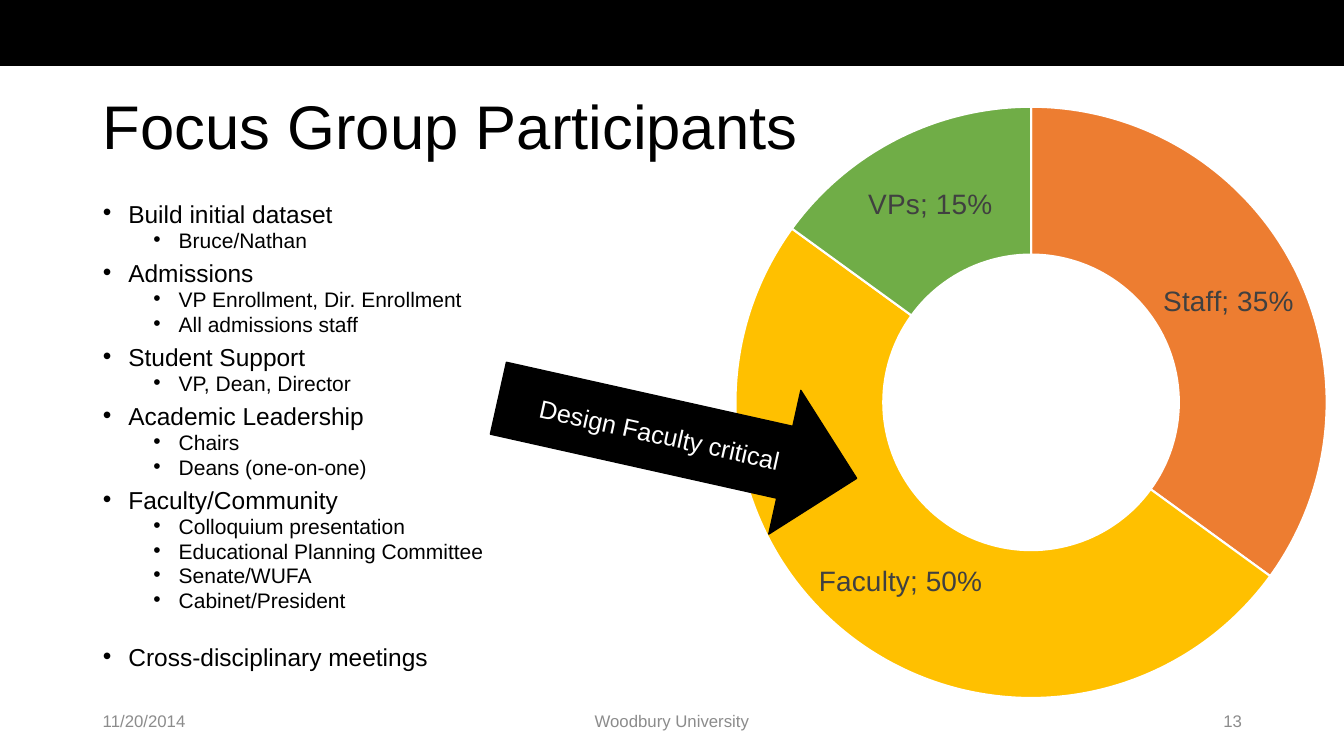
from lxml.etree import SubElement
from pptx import Presentation
from pptx.chart.data import CategoryChartData
from pptx.dml.color import RGBColor
from pptx.enum.chart import XL_CHART_TYPE
from pptx.enum.shapes import MSO_SHAPE
from pptx.enum.text import MSO_ANCHOR, MSO_AUTO_SIZE, PP_ALIGN
from pptx.oxml.ns import qn
from pptx.util import Cm, Pt

BLACK = RGBColor(0x00, 0x00, 0x00)
WHITE = RGBColor(0xFF, 0xFF, 0xFF)
FOOTER_GREY = RGBColor(0x8C, 0x8C, 0x8C)
LABEL_GREY = RGBColor(0x40, 0x40, 0x40)
ORANGE = RGBColor(0xED, 0x7D, 0x31)
GOLD = RGBColor(0xFF, 0xC0, 0x00)
GREEN = RGBColor(0x70, 0xAD, 0x47)

SLIDE_WIDTH, SLIDE_HEIGHT = 33.87, 19.05
MARGIN = 2.34
CONTENT_WIDTH = 29.21

TOPICS = [
    ("Build initial dataset", ["Bruce/Nathan"]),
    ("Admissions", ["VP Enrollment, Dir. Enrollment", "All admissions staff"]),
    ("Student Support", ["VP, Dean, Director"]),
    ("Academic Leadership", ["Chairs", "Deans (one-on-one)"]),
    ("Faculty/Community", ["Colloquium presentation", "Educational Planning Committee",
                           "Senate/WUFA", "Cabinet/President"]),
    ("Cross-disciplinary meetings", []),
]
CLOSING_GAP = 27
PARTICIPANTS = [("Staff", 0.35, ORANGE), ("Faculty", 0.5, GOLD), ("VPs", 0.15, GREEN)]
FOOTERS = [
    (MARGIN, 7.62, "11/20/2014", PP_ALIGN.LEFT),
    (11.22, 11.43, "Woodbury University", PP_ALIGN.CENTER),
    (23.93, 7.62, "13", PP_ALIGN.RIGHT),
]


class SlideBuilder:
    """Holds the text style and the current slide, and adds elements to it."""

    font_name = "Arial"

    def __init__(self, presentation):
        """Start a title-and-content slide."""
        self.slide = presentation.slides.add_slide(presentation.slide_layouts[1])

    def apply(self, target, **values):
        """Set each named value on the target."""
        for name, value in values.items():
            setattr(target, name, value)

    def style_font(self, font, size, color):
        """Give a font the slide's typeface, a size and a colour."""
        self.apply(font, name=self.font_name, size=Pt(size))
        font.color.rgb = color

    def place(self, shape, left, top, width, height):
        """Move and size a shape in centimetres."""
        self.apply(shape, left=Cm(left), top=Cm(top), width=Cm(width), height=Cm(height))

    def caption(self, shape, text, size, color, alignment):
        """Put one vertically centred line of text in a shape."""
        self.apply(shape.text_frame, text=text, word_wrap=True,
                   auto_size=MSO_AUTO_SIZE.NONE, vertical_anchor=MSO_ANCHOR.MIDDLE)
        paragraph = shape.text_frame.paragraphs[0]
        paragraph.alignment = alignment
        self.style_font(paragraph.font, size, color)
        return paragraph

    def title(self, text, *box):
        """Fill the title placeholder."""
        shape = self.slide.shapes.title
        self.place(shape, *box)
        self.caption(shape, text, 44, BLACK, PP_ALIGN.LEFT).line_spacing = 0.9

    def bullet(self, paragraph, text, level, space_before):
        """Format one bulleted paragraph."""
        paragraph.text = text
        properties = paragraph._p.get_or_add_pPr()
        properties.set("marL", str(Cm(0.64 + 1.27 * level)))
        properties.set("indent", str(-Cm(0.64)))
        self.apply(paragraph, level=level, line_spacing=0.7,
                   space_before=Pt(space_before), alignment=PP_ALIGN.LEFT)
        SubElement(properties, qn("a:buFont")).set("typeface", self.font_name)
        SubElement(properties, qn("a:buChar")).set("char", "•")
        self.style_font(paragraph.font, 15 if level else 17.5, BLACK)

    def topics(self, groups, *box):
        """Fill the body placeholder with a two-level list."""
        shape = self.slide.placeholders[1]
        self.place(shape, *box)
        frame = shape.text_frame
        self.apply(frame, word_wrap=True, auto_size=MSO_AUTO_SIZE.NONE,
                   vertical_anchor=MSO_ANCHOR.TOP)
        for index, (heading, details) in enumerate(groups):
            paragraph = frame.add_paragraph() if index else frame.paragraphs[0]
            gap = 0 if index == 0 else 10 if details else CLOSING_GAP
            self.bullet(paragraph, heading, 0, gap)
            for detail in details:
                self.bullet(frame.add_paragraph(), detail, 1, 5)

    def block(self, kind, *box):
        """Add a black preset shape."""
        shape = self.slide.shapes.add_shape(kind, *map(Cm, box))
        shape.shadow.inherit = False
        shape.fill.solid()
        shape.fill.fore_color.rgb = BLACK
        shape.line.fill.background()
        return shape

    def arrow(self, text, rotation, *box):
        """Add a rotated arrow with a caption."""
        shape = self.block(MSO_SHAPE.RIGHT_ARROW, *box)
        shape.rotation = rotation
        shape.line.color.rgb = BLACK
        shape.line.width = Pt(1)
        self.caption(shape, text, 18, WHITE, PP_ALIGN.CENTER)

    def footer(self, left, width, text, alignment):
        """Add a small grey text at the bottom."""
        shape = self.slide.shapes.add_textbox(Cm(left), Cm(17.65), Cm(width), Cm(1.02))
        self.caption(shape, text, 12, FOOTER_GREY, alignment)

    def doughnut(self, shares, *box):
        """Add a doughnut chart of labelled shares."""
        data = CategoryChartData(number_format="0%")
        data.categories = [name for name, _, _ in shares]
        data.add_series("Series 1", [value for _, value, _ in shares])
        chart = self.slide.shapes.add_chart(XL_CHART_TYPE.DOUGHNUT, *map(Cm, box), data).chart
        self.apply(chart, has_title=False, has_legend=False)
        self.style_font(chart.font, 10, BLACK)
        plot = chart.plots[0]
        self.apply(plot, vary_by_categories=True, has_data_labels=True)
        labels = plot.data_labels
        self.apply(labels, show_value=True, show_category_name=True, show_percentage=False,
                   number_format="0%", number_format_is_linked=False)
        self.style_font(labels.font, 20, LABEL_GREY)
        separator = labels._element.makeelement(qn("c:separator"))
        separator.text = "; "
        labels._element.find(qn("c:showBubbleSize")).addnext(separator)
        for index, (_, _, color) in enumerate(shares):
            slice_format = plot.series[0].points[index].format
            slice_format.fill.solid()
            slice_format.fill.fore_color.rgb = color
            slice_format.line.color.rgb = WHITE
            slice_format.line.width = Pt(1.5)


def main():
    """Build and save the slide."""
    presentation = Presentation()
    presentation.slide_width = Cm(SLIDE_WIDTH)
    presentation.slide_height = Cm(SLIDE_HEIGHT)
    builder = SlideBuilder(presentation)
    builder.block(MSO_SHAPE.RECTANGLE, 0, 0, SLIDE_WIDTH, 1.66)
    builder.title("Focus Group Participants", MARGIN, 1.88, CONTENT_WIDTH, 2.79)
    builder.topics(TOPICS, MARGIN, 5.08, CONTENT_WIDTH, 12.09)
    builder.doughnut(PARTICIPANTS, 18.11, 2.34, 15.75, 15.6)
    builder.arrow("Design Faculty critical", 12.6, 12.45, 9.19, 9.25, 3.71)
    for footer in FOOTERS:
        builder.footer(*footer)
    presentation.save("out.pptx")


if __name__ == "__main__":
    main()
